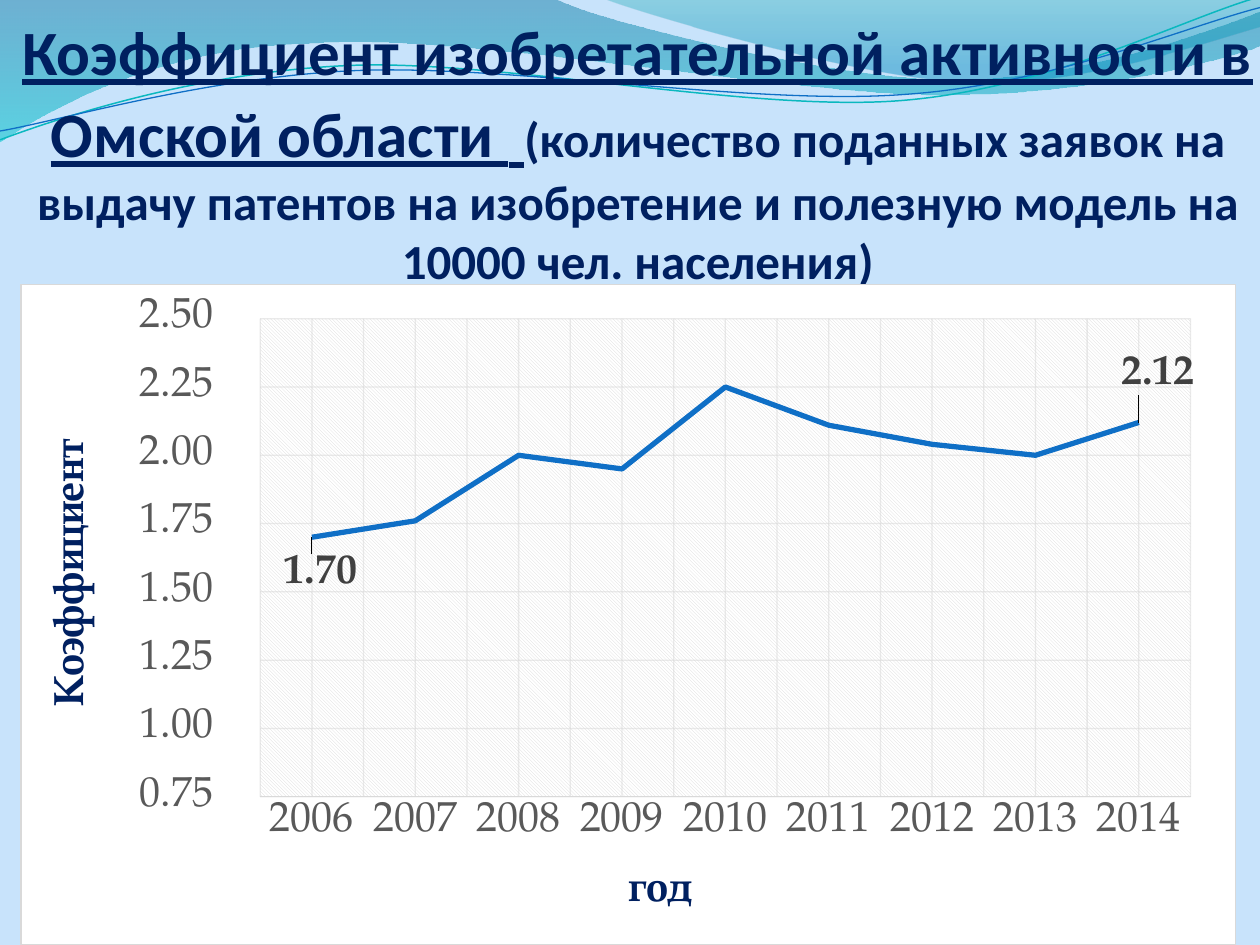
from math import cos, radians, sin

from lxml import etree
from pptx import Presentation
from pptx import util as u
from pptx.chart.data import CategoryChartData
from pptx.dml.color import RGBColor
from pptx.enum import chart as ch, text
from pptx.oxml import parse_xml
from pptx.oxml.ns import nsdecls, qn

COLORS = {"bg": "C8E3FB", "navy": "002060", "line": "0F6FC6", "teal": "0AB8BF",
          "tick": "595959", "label": "404040", "grid": "D9D9D9", "white": "FFFFFF",
          "sea": "0074A1", "aqua": "00C6CF", "lagoon": "00A1A9", "sky": "008BBF"}
HEAD, BODY = "Calibri", "TeX Gyre Pagella"

TITLE_BOX = (0.41, 0.33, 24.89, 5.51)
TITLE = [
    ("Коэффициент изобретательной активности в Омской области ", 36, True),
    (" ", 40, True),
    ("(количество поданных заявок на выдачу патентов на изобретение и полезную "
     "модель на 10000 чел. населения)", 28, False),
]

CHART_BOX = (0.41, 5.72, 24.51, 13.34)
YEARS = [str(y) for y in range(2006, 2015)]
VALUES = [1.7, 1.76, 2, 1.95, 2.25, 2.11, 2.04, 2, 2.12]
LABEL_SHIFTS = {0: (0.007, 0.055), 8: (0.016, -0.072)}
PLOT_LAYOUT = (0.197, 0.052, 0.766, 0.724)
AXIS_TITLES = {"category_axis": ("год", 0, (0.494, 0.87)),
               "value_axis": ("Коэффициент", -5400000, (0.016, 0.223))}
VALUE_FORMAT = r'_-* #,##0.00_р_._-;\-* #,##0.00_р_._-;_-* "-"??_р_._-;_-@_-'

INCH = 2.54
TILT, TILT_CENTER = -2.7, (4.99, 0.58)
WAVES = [
    {"points": [(0, 0), (4.4, -0.01), (4.76, 0.17, 6.64, 0.63, 7.58, 0.63),
                (8.53, 0.63, 9.58, 0.26, 10, 0.09), (10.01, 0.36),
                (9.83, 0.44, 8.7, 0.76, 7.46, 0.75), (6.22, 0.75, 3.82, 0.28, 2.57, 0.34),
                (1.29, 0.36, 0.46, 0.83, -0.01, 1.13), (0, 0)],
     "stops": [(0, "sea", 45), (1, "aqua", 55)]},
    {"points": [(4.79, -0.01), (5.09, 0.11, 6.82, 0.62, 7.69, 0.65),
                (8.56, 0.69, 9.61, 0.32, 10, 0.21), (10, 0), (4.79, -0.01)],
     "stops": [(0, "lagoon", 30), (0.8, "sky", 45)]},
    {"points": [(0, 1.11), (0.48, 0.93, 1.58, 0.57, 2.77, 0.52),
                (3.95, 0.47, 5.93, 0.89, 7.13, 0.8), (8.33, 0.71, 9.38, 0.15, 9.98, -0.02)],
     "line": ("teal", 0.85)},
    {"points": [(0, 1.04), (0.47, 0.96, 1.64, 0.61, 2.83, 0.56),
                (4.03, 0.51, 5.97, 0.84, 7.17, 0.75), (8.36, 0.67, 9.41, 0.21, 10, 0.06)],
     "line": ("line", 0.75)},
]


def rgb(name):
    return RGBColor.from_string(COLORS[name])


def box(lengths):
    return [u.Cm(v) for v in lengths]


def set_attrs(obj, **values):
    for key, value in values.items():
        setattr(obj, key, value)


def set_font(font, color, size, **values):
    set_attrs(font, size=u.Pt(size), **values)
    font.color.rgb = rgb(color)


def set_line(line, color, width):
    line.color.rgb = rgb(color)
    line.width = u.Pt(width)


def add_alpha(parent, percent):
    for clr in parent.iter(qn("a:srgbClr")):
        etree.SubElement(clr, qn("a:alpha"), val=str(percent * 1000))


def locate(x, y, tilted):
    if tilted:
        cx, cy = TILT_CENTER
        a, dx, dy = radians(-TILT), x - cx, y - cy
        x, y = cx + dx * cos(a) - dy * sin(a), cy + dx * sin(a) + dy * cos(a)
    return u.Cm(x * INCH), u.Cm(y * INCH)


def add_wave(s, wave):
    tilted = "line" in wave
    segs = [[locate(*seg[i:i + 2], tilted) for i in range(0, len(seg), 2)]
            for seg in wave["points"]]
    fb = s.shapes.build_freeform(*segs[0][0], scale=1.0)
    fb.add_line_segments([seg[-1] for seg in segs[1:]], close=not tilted)
    sp = fb.convert_to_shape()
    for ln, seg in zip(list(sp._element.iter(qn("a:lnTo"))), segs[1:]):
        if len(seg) == 3:
            ln.tag
            curve = etree.Element(qn("a:cubicBezTo"))
            for x, y in seg:
                etree.SubElement(curve, qn("a:pt"), x=str(x - sp.left), y=str(y - sp.top))
            ln.getparent().replace(ln, curve)
    sp.shadow.inherit = False
    if tilted:
        sp.rotation = TILT
        sp.fill.background()
        set_line(sp.line, *wave["line"])
        return
    sp.line.fill.background()
    sp.fill.gradient()
    sp.fill.gradient_angle = 270
    gs_list = sp._element.iter(qn("a:gs"))
    for stop, gs, (pos, color, alpha) in zip(sp.fill.gradient_stops, gs_list, wave["stops"]):
        stop.position = pos
        stop.color.rgb = rgb(color)
        add_alpha(gs, alpha)


def add_title(s):
    tf = s.shapes.add_textbox(*box(TITLE_BOX)).text_frame
    set_attrs(tf, word_wrap=True, vertical_anchor=text.MSO_ANCHOR.BOTTOM,
              margin_left=0, margin_right=0, margin_bottom=0, margin_top=u.Cm(0.13))
    p = tf.paragraphs[0]
    p.alignment = text.PP_ALIGN.CENTER
    for words, size, underline in TITLE:
        r = p.add_run()
        r.text = words
        set_font(r.font, "navy", size, name=HEAD, bold=True, underline=underline)


def set_layout(parent, index, values, inner=False, edge=True):
    for old in parent.findall(qn("c:layout")):
        parent.remove(old)
    layout = etree.Element(qn("c:layout"))
    manual = etree.SubElement(layout, qn("c:manualLayout"))
    items = [("layoutTarget", "inner")] if inner else []
    if edge:
        items += [("xMode", "edge"), ("yMode", "edge")]
    items += zip("xywh", values)
    for tag, value in items:
        etree.SubElement(manual, qn("c:" + tag), val=str(value))
    parent.insert(index, layout)


def area_format(inside):
    return parse_xml(f'<c:spPr {nsdecls("c", "a")}>{inside}</c:spPr>')


def color_xml(tag, name):
    return f'<a:{tag}><a:srgbClr val="{COLORS[name]}"/></a:{tag}>'


def add_labels(ser):
    labels = ser.data_labels
    set_attrs(labels, show_value=True, position=ch.XL_LABEL_POSITION.CENTER)
    set_font(labels.font, "label", 24, name=BODY, bold=True)
    for i in range(len(VALUES)):
        dl = ser.points[i].data_label
        dl.position = ch.XL_LABEL_POSITION.CENTER
        el = dl._dLbl
        if i in LABEL_SHIFTS:
            set_font(dl.font, "label", 24, name=BODY, bold=True)
            set_layout(el, 1, LABEL_SHIFTS[i], edge=False)
        else:
            for child in list(el)[1:]:
                el.remove(child)
            etree.SubElement(el, qn("c:delete"), val="1")
    labels._element.append(parse_xml(
        f'<c:extLst {nsdecls("c")}><c:ext uri="{{CE6537A1-D6FC-4f65-9D91-7224C49458BB}}" '
        'xmlns:c15="http://schemas.microsoft.com/office/drawing/2012/chart">'
        '<c15:showLeaderLines val="0"/></c:ext></c:extLst>'))


def add_chart(s):
    cd = CategoryChartData(number_format="0.00")
    cd.categories = YEARS
    cd.add_series("Series 1", VALUES)
    chart = s.shapes.add_chart(ch.XL_CHART_TYPE.LINE, *box(CHART_BOX), cd).chart
    chart.has_legend = chart.has_title = False
    set_font(chart.font, "tick", 24, name=BODY)
    chart.plots[0].vary_by_categories = False

    for name, (words, rotation, place) in AXIS_TITLES.items():
        axis = getattr(chart, name)
        axis.major_tick_mark = axis.minor_tick_mark = ch.XL_TICK_MARK.NONE
        axis.has_major_gridlines = True
        set_line(axis.major_gridlines.format.line, "grid", 0.75)
        add_alpha(axis._element.find(qn("c:majorGridlines")), 54)
        set_font(axis.tick_labels.font, "tick", 24, name=BODY)
        tf = axis.axis_title.text_frame
        tf.text = words
        set_font(tf.paragraphs[0].runs[0].font, "navy", 24, name=BODY, bold=True)
        body = tf._txBody.bodyPr
        body.set("rot", str(rotation))
        body.set("vert", "horz")
        set_layout(axis._element.find(qn("c:title")), 1, place)

    ca, va = chart.category_axis, chart.value_axis
    set_line(ca.format.line, "grid", 0.75)
    ca.has_minor_gridlines = True
    ca.minor_gridlines.format.line if hasattr(ca, "minor_gridlines") else None
    minor = ca._element.find(qn("c:minorGridlines"))
    minor.append(area_format(f'<a:ln w="9525">{color_xml("solidFill", "grid")}</a:ln>'))
    add_alpha(minor, 54)
    va.format.line.fill.background()
    set_attrs(va, minimum_scale=0.75, maximum_scale=2.5, major_unit=0.25)
    set_attrs(va.tick_labels, number_format=VALUE_FORMAT, number_format_is_linked=False)

    ser = chart.plots[0].series[0]
    ser.smooth = False
    ser.marker.style = ch.XL_MARKER_STYLE.NONE
    set_line(ser.format.line, "line", 3)
    add_labels(ser)

    root = chart._chartSpace
    set_layout(root.chart.plotArea, 0, PLOT_LAYOUT, inner=True)
    root.chart.plotArea.append(area_format(
        f'<a:pattFill prst="ltDnDiag">{color_xml("fgClr", "grid")}'
        f'{color_xml("bgClr", "white")}</a:pattFill>'))
    root.chart.addnext(area_format(
        f'{color_xml("solidFill", "white")}<a:ln w="9525">{color_xml("solidFill", "grid")}</a:ln>'))


prs = Presentation()
prs.slide_width, prs.slide_height = u.Cm(25.4), u.Cm(19.05)
s = prs.slides.add_slide(prs.slide_layouts[6])
s.background.fill.solid()
s.background.fill.fore_color.rgb = rgb("bg")
for wave in WAVES:
    add_wave(s, wave)
add_title(s)
add_chart(s)
prs.save("out.pptx")
